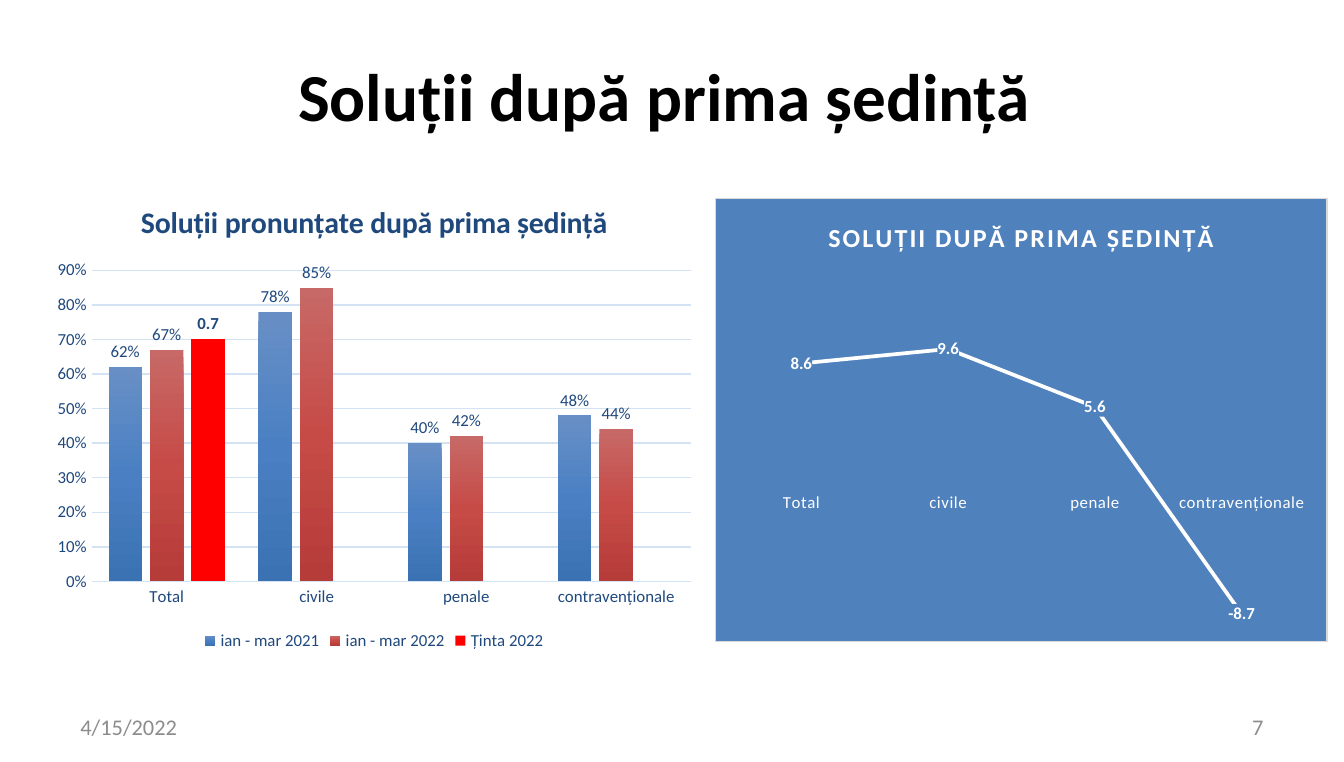
from dataclasses import dataclass

from pptx import Presentation
from pptx.chart.data import CategoryChartData
from pptx.dml.color import RGBColor
from pptx.enum.chart import XL_CHART_TYPE as ChartType
from pptx.enum.chart import XL_LABEL_POSITION as LabelPosition
from pptx.enum.chart import XL_LEGEND_POSITION as LegendPosition
from pptx.enum.chart import XL_TICK_MARK as TickMark
from pptx.enum.text import MSO_ANCHOR as Anchor
from pptx.enum.text import PP_ALIGN as Align
from pptx.oxml import parse_xml
from pptx.oxml.ns import nsdecls, qn
from pptx.util import Pt

PX = 9144


@dataclass(frozen=True)
class Theme:
    font: str = "Calibri"
    black: str = "000000"
    white: str = "FFFFFF"
    navy: str = "1F497D"
    grey: str = "8C8C8C"
    grid: str = "D4E3F4"
    panel: str = "4F81BD"
    border: str = "D9D9D9"
    target: str = "FF0000"
    blues: tuple = ("688FC5", "4A80C3", "3B72B3")
    reds: tuple = ("C76967", "C64B47", "B63C39")
    title: int = 36
    bar_title: int = 16
    line_title: int = 14
    footer: int = 12
    chart: int = 10
    label: int = 9
    hairline: float = 0.75
    trend: int = 2


T = Theme()

SLIDE = (1000, 567)
TITLE = ("Soluții după prima ședință ", (50, 23, 900, 95))
FOOTERS = [
    ("4/15/2022", (50, 526, 233, 30), Align.LEFT),
    ("7", (717, 526, 233, 30), Align.RIGHT),
]
CATEGORIES = ["Total", "civile", "penale", "contravenționale"]
BARS = {
    "title": "Soluții pronunțate după prima ședință",
    "box": (33, 134, 491, 354),
    "series": [
        ("ian - mar 2021", (0.62, 0.78, 0.40, 0.48), T.blues, "0%", False),
        ("ian - mar 2022", (0.67, 0.85, 0.42, 0.44), T.reds, "0%", False),
        ("Ținta 2022", (0.7, None, None, None), T.target, "General", True),
    ],
}
TREND = {
    "title": "SOLUȚII DUPĂ PRIMA ȘEDINȚĂ",
    "box": (532, 147, 456, 331),
    "series": [("Series 1", (8.6, 9.6, 5.6, -8.7))],
}


def emu(box):
    return [length * PX for length in box]


def rgb(color):
    return RGBColor.from_string(color)


def style(font, size, color, bold=False, spacing=0):
    font.name, font.size, font.bold = T.font, Pt(size), bold
    font.color.rgb = rgb(color)
    if spacing:
        font._element.set("spc", str(spacing))


def write(frame, text, align=Align.LEFT, after=0, **font_format):
    frame.word_wrap = True
    frame.vertical_anchor = Anchor.MIDDLE
    paragraph = frame.paragraphs[0]
    paragraph.alignment, paragraph.space_after = align, Pt(after)
    run = paragraph.add_run()
    run.text = text
    style(run.font, **font_format)


def outline(line, color, width):
    line.color.rgb = rgb(color)
    line.width = Pt(width)


def shade(series, stops):
    marks = "".join(
        f'<a:gs pos="{i * 50000}"><a:srgbClr val="{color}"/></a:gs>'
        for i, color in enumerate(stops)
    )
    properties = series.format.fill._xPr
    properties.insert(0, parse_xml(
        f'<a:gradFill {nsdecls("a")} rotWithShape="1"><a:gsLst>{marks}</a:gsLst>'
        '<a:lin ang="5400000" scaled="0"/></a:gradFill>'
    ))


def solid(color):
    return f'<a:solidFill><a:srgbClr val="{color}"/></a:solidFill>'


def fill_after(element, color, line="<a:ln><a:noFill/></a:ln>"):
    element.addnext(parse_xml(
        f'<c:spPr {nsdecls("c", "a")}>{solid(color)}{line}</c:spPr>'
    ))


def label_values(series, color, number_format, position, bold, backing=None):
    labels = series.data_labels
    labels.show_value = True
    labels.number_format, labels.number_format_is_linked = number_format, False
    labels.position = position
    style(labels.font, T.label, color, bold)
    if backing:
        fill_after(labels._element.find(qn("c:numFmt")), backing)


def plain_axis(axis, color, spacing=0):
    axis.major_tick_mark = axis.minor_tick_mark = TickMark.NONE
    style(axis.tick_labels.font, T.label, color, spacing=spacing)


def add_chart(slide, kind, content, **title_format):
    data = CategoryChartData()
    data.categories = CATEGORIES
    for name, values, *_ in content["series"]:
        data.add_series(name, values)
    chart = slide.shapes.add_chart(kind, *emu(content["box"]), data).chart
    style(chart.font, T.chart, T.black)
    chart.has_title = True
    write(chart.chart_title.text_frame, content["title"], align=Align.CENTER,
          bold=True, **title_format)
    chart.plots[0].vary_by_categories = False
    return chart


def add_bars(slide):
    chart = add_chart(slide, ChartType.COLUMN_CLUSTERED, BARS,
                      size=T.bar_title, color=T.navy)
    plot = chart.plots[0]
    plot.gap_width, plot.overlap = 100, -24
    for series, (_, _, paint, number_format, bold) in zip(plot.series, BARS["series"]):
        if isinstance(paint, tuple):
            shade(series, paint)
        else:
            series.format.fill.solid()
            series.format.fill.fore_color.rgb = rgb(paint)
        label_values(series, T.navy, number_format, LabelPosition.OUTSIDE_END, bold)
    categories, values = chart.category_axis, chart.value_axis
    plain_axis(categories, T.navy)
    plain_axis(values, T.navy)
    outline(categories.format.line, T.grid, T.hairline)
    outline(values.major_gridlines.format.line, T.grid, T.hairline)
    values.format.line.fill.background()
    values.minimum_scale, values.maximum_scale, values.major_unit = 0, 0.9, 0.1
    values.tick_labels.number_format = "0%"
    values.tick_labels.number_format_is_linked = False
    chart.has_legend = True
    chart.legend.position = LegendPosition.BOTTOM
    chart.legend.include_in_layout = False
    style(chart.legend.font, T.label, T.navy)


def add_trend(slide):
    chart = add_chart(slide, ChartType.LINE_STACKED, TREND,
                      size=T.line_title, color=T.white, spacing=100)
    fill_after(chart._chartSpace.chart, T.panel,
               f'<a:ln w="{Pt(T.hairline)}">{solid(T.border)}</a:ln>')
    chart.has_legend = False
    series = chart.plots[0].series[0]
    series.smooth = False
    outline(series.format.line, T.white, T.trend)
    label_values(series, T.white, "0.0", LabelPosition.CENTER, True, backing=T.panel)
    plain_axis(chart.category_axis, T.white, spacing=30)
    chart.category_axis.format.line.fill.background()
    values = chart.value_axis
    values.has_major_gridlines = False
    values.minimum_scale, values.maximum_scale = -10, 15
    values.visible = False


def main():
    deck = Presentation()
    deck.slide_width, deck.slide_height = emu(SLIDE)
    slide = deck.slides.add_slide(deck.slide_layouts[5])

    heading, box = TITLE
    title = slide.shapes.title
    title.left, title.top, title.width, title.height = emu(box)
    write(title.text_frame, heading, align=Align.CENTER, after=6,
          size=T.title, color=T.black, bold=True)

    for text, box, align in FOOTERS:
        footer = slide.shapes.add_textbox(*emu(box))
        write(footer.text_frame, text, align=align, after=6,
              size=T.footer, color=T.grey)

    add_bars(slide)
    add_trend(slide)
    deck.save("out.pptx")


if __name__ == "__main__":
    main()
